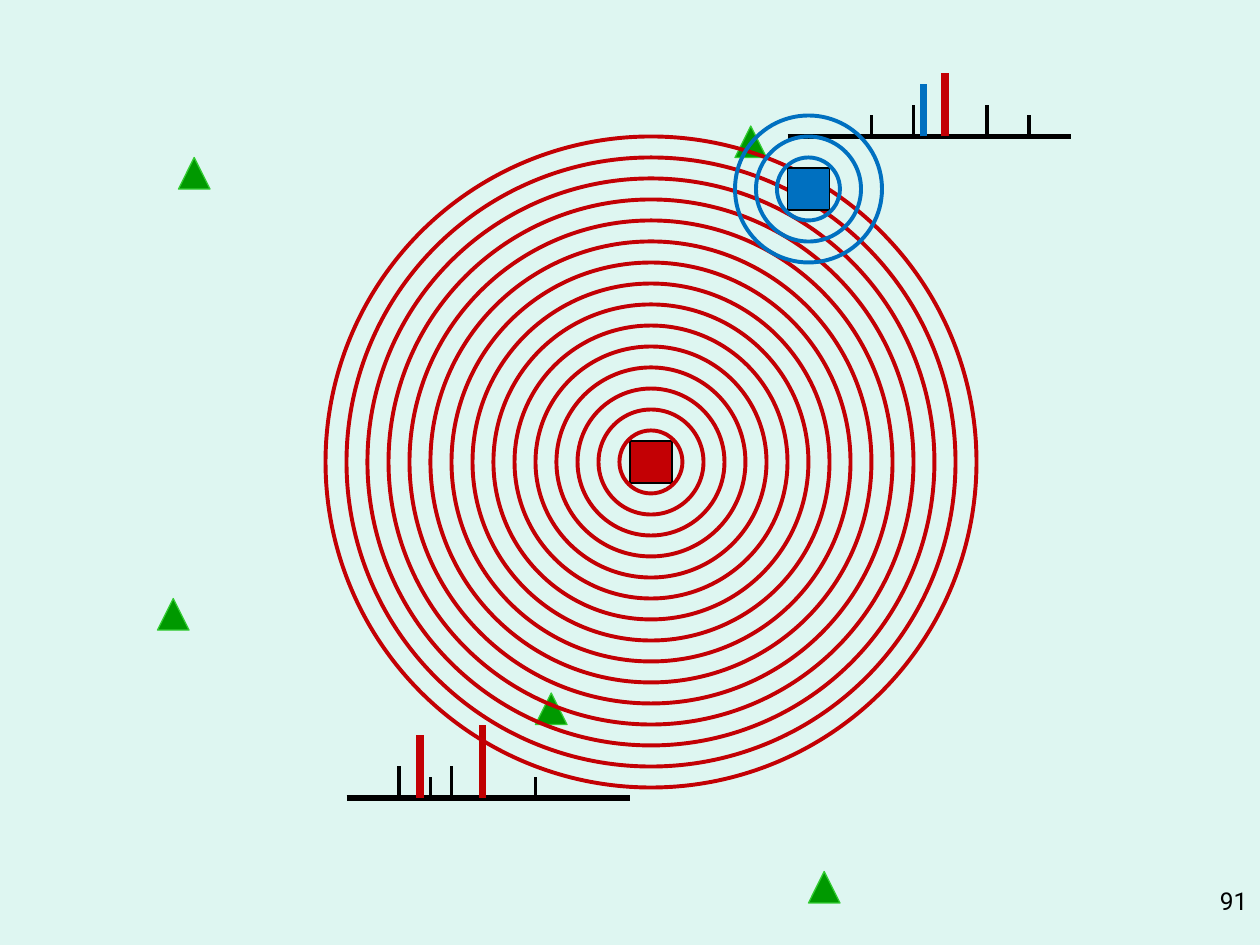
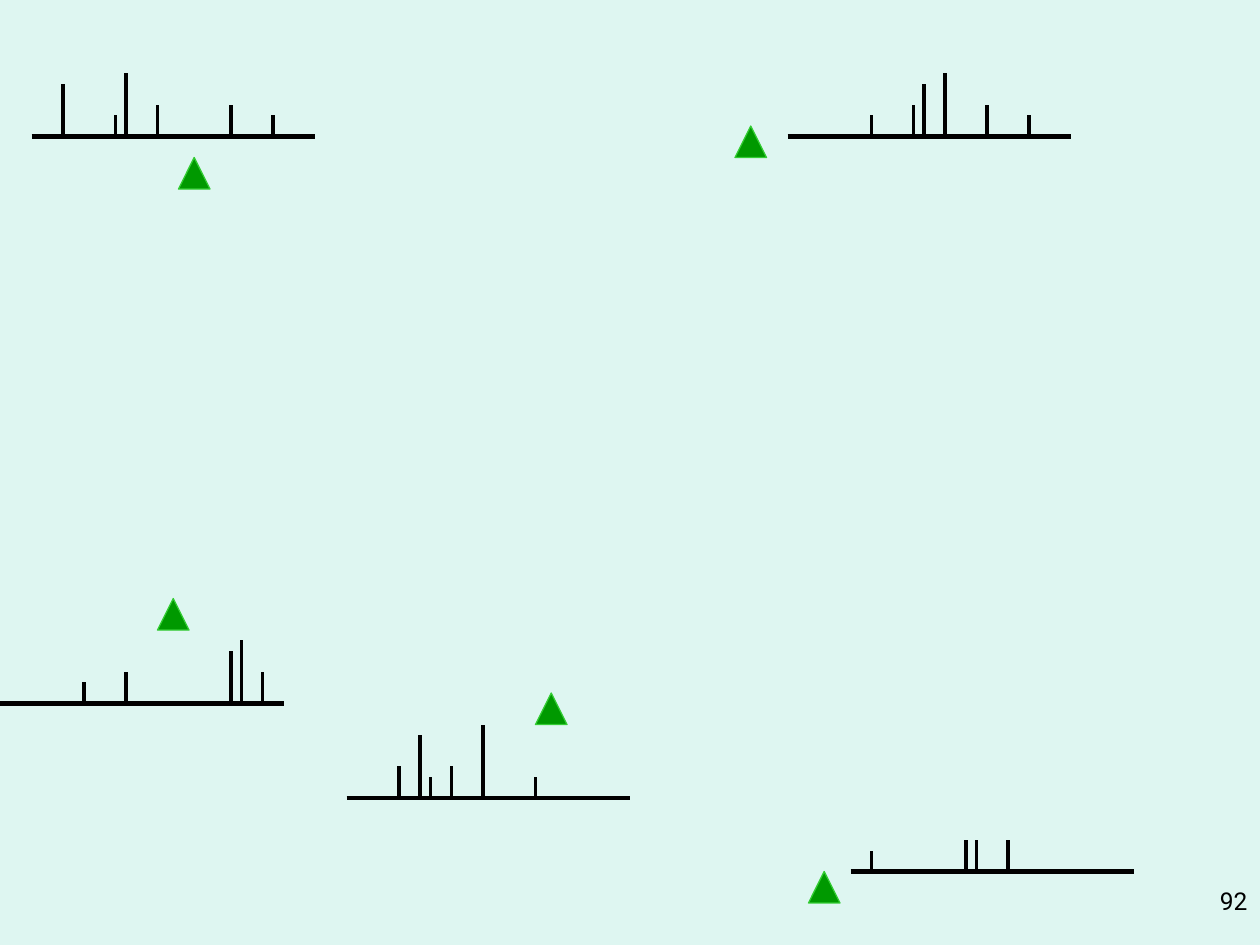
from lxml import etree
from pptx import Presentation
from pptx import util as u
from pptx.dml.color import RGBColor
from pptx.enum import shapes, text
from pptx.oxml.ns import qn

MINT = RGBColor(0xDE, 0xF6, 0xF1)
BLACK = RGBColor(0x00, 0x00, 0x00)
RED = RGBColor(0xC3, 0x00, 0x04)
DARK_RED = RGBColor(0xC0, 0x00, 0x00)
BLUE = RGBColor(0x00, 0x70, 0xC0)
GREEN = RGBColor(0x00, 0x99, 0x00)
LIGHT_GREEN = RGBColor(0x33, 0xCC, 0x33)

# Every position is counted in grid cells, twelve to the inch
CELL = 2.54 / 12
AXIS_LENGTH = 27
NUMBER_FORMAT = {"name": "Roboto", "size": u.Pt(14)}

# Left and top of each green sensor
SENSORS = [(17, 15), (70, 12), (15, 57), (77, 83), (51, 66)]

# Spectra: axis left, axis level, then (offset, height) of each peak
LOWER = (33, 76, [(5, 3), (8, 2), (7, 6), (18, 2), (13, 7), (10, 3)])
UPPER_RIGHT = (75, 13, [(19, 3), (8, 2), (15, 6), (23, 2), (13, 5), (12, 3)])
UPPER_LEFT = (3, 13, [(19, 3), (8, 2), (9, 6), (23, 2), (3, 5), (12, 3)])
LEFT = (0, 67, [(25, 3), (8, 2), (23, 6), (23, 2), (22, 5), (12, 3)])
LOWER_RIGHT = (81, 83, [(11, 3), (2, 2), (15, 3), (12, 3)])


def add_figure(page, kind, left, top, size, fill, line, weight):
    """Place a square-framed shape; fill None leaves it hollow."""
    frame = [u.Cm(cells * CELL) for cells in (left, top, size, size)]
    figure = page.shapes.add_shape(kind, *frame)
    figure.shadow.inherit = False
    if fill is None:
        figure.fill.background()
    else:
        figure.fill.solid()
        figure.fill.fore_color.rgb = fill
    figure.line.color.rgb = line
    figure.line.width = u.Pt(weight)


def add_spectrum(target, spectrum, axis_weight=3, marked=None):
    """Draw an axis and its peaks; marked maps an offset to colour and weight."""
    left, level, peaks = spectrum
    strokes = [(left, left + AXIS_LENGTH, level, BLACK, axis_weight)]
    for offset, height in peaks:
        colour, weight = (marked or {}).get(offset, (BLACK, 2.25))
        strokes.append((left + offset, left + offset, level - height, colour, weight))
    for start, end, top, colour, weight in strokes:
        ends = [u.Cm(cells * CELL) for cells in (start, level, end, top)]
        stroke = target.add_connector(shapes.MSO_CONNECTOR.STRAIGHT, *ends)
        stroke.line.color.rgb = colour
        stroke.line.width = u.Pt(weight)
        etree.SubElement(stroke._element.spPr, qn("a:effectLst"))


deck = Presentation()
deck.slide_width, deck.slide_height = u.Cm(25.4), u.Cm(19.05)
deck.slide_master.background.fill.solid()
deck.slide_master.background.fill.fore_color.rgb = MINT

# Shared parts: page number and sensors
pages = []
for number in (91, 92):
    page = deck.slides.add_slide(deck.slide_layouts[6])
    pages.append(page)
    box = page.shapes.add_textbox(u.Cm(23.29), u.Cm(17.73), u.Cm(2.11), u.Cm(1.32))
    box.text_frame.word_wrap = True
    para = box.text_frame.paragraphs[0]
    para.alignment = text.PP_ALIGN.RIGHT
    span = para.add_run()
    span.text = str(number)
    for name, value in NUMBER_FORMAT.items():
        setattr(span.font, name, value)
    span.font.color.rgb = BLACK
    for left, top in SENSORS:
        add_figure(page, shapes.MSO_SHAPE.ISOSCELES_TRIANGLE, left, top, 3,
                   GREEN, LIGHT_GREEN, 0.75)

waves_page, spectra_page = pages

# Slide 1: two sources, their wave rings and the spectra they reach
for centre_x, centre_y, colour, ring_count in ((62, 44, RED, 15), (77, 18, BLUE, 3)):
    add_figure(waves_page, shapes.MSO_SHAPE.RECTANGLE, centre_x - 2, centre_y - 2, 4,
               colour, BLACK, 0.75)
    for ring in range(ring_count):
        if ring == 12:  # the outer red rings pass over the lower spectrum
            add_spectrum(waves_page.shapes.add_group_shape().shapes, LOWER,
                         marked={7: (RED, 4.5), 13: (DARK_RED, 4)})
        radius = 3 + 2 * ring
        add_figure(waves_page, shapes.MSO_SHAPE.OVAL, centre_x - radius,
                   centre_y - radius, 2 * radius, None, colour, 2.25)
    if colour == RED:  # the blue source lies over the upper spectrum
        add_spectrum(waves_page.shapes, UPPER_RIGHT,
                     marked={15: (RED, 4.5), 13: (BLUE, 4)})

# Slide 2: the spectrum at every sensor
add_spectrum(spectra_page.shapes, LOWER, axis_weight=2.25)
for spectrum in (UPPER_RIGHT, UPPER_LEFT, LEFT, LOWER_RIGHT):
    add_spectrum(spectra_page.shapes, spectrum)

deck.save("out.pptx")
